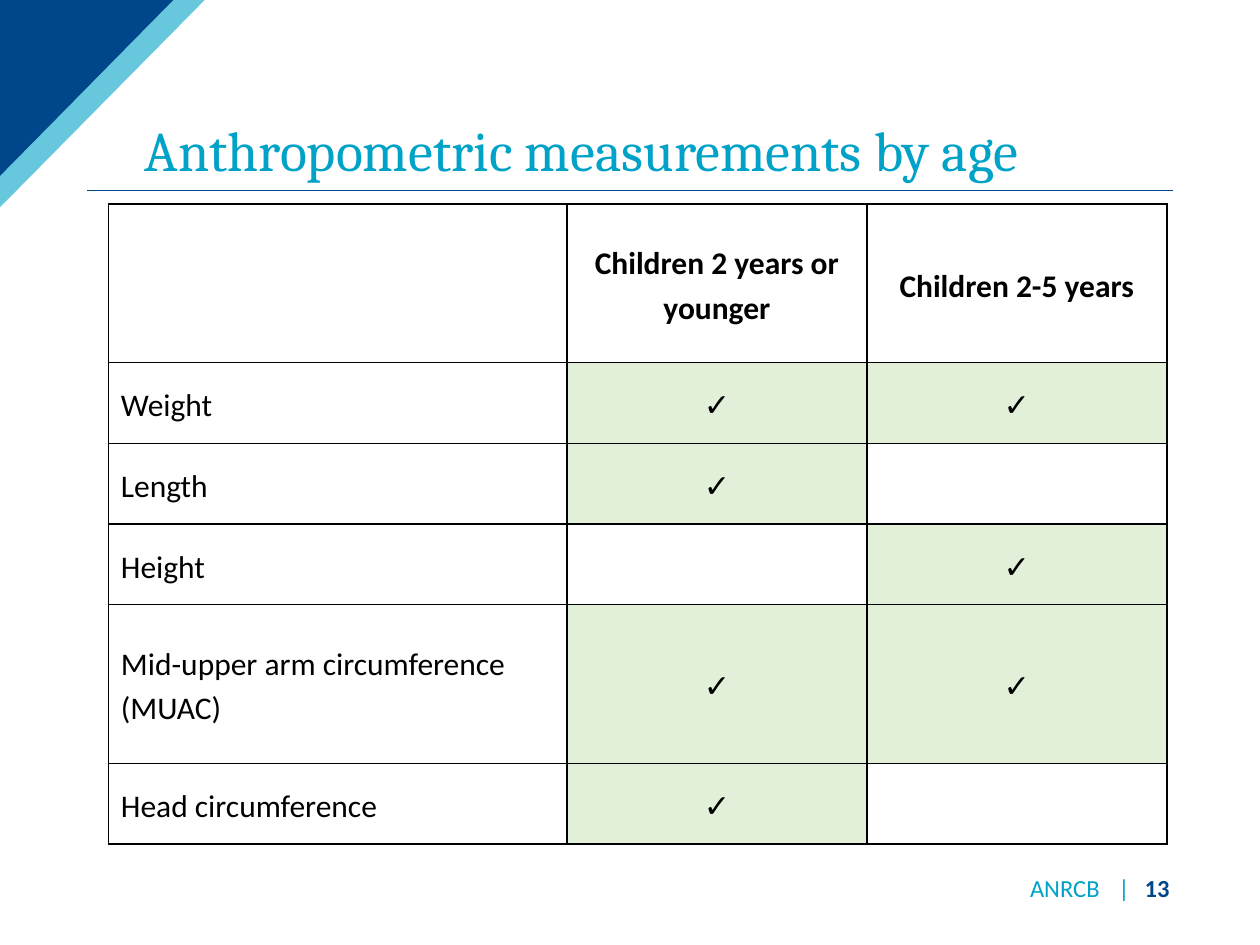
import pptx
import pptx.dml.color
import pptx.enum.shapes
import pptx.enum.text
import pptx.oxml
import pptx.oxml.ns
import pptx.util
from dataclasses import dataclass

Pt = pptx.util.Pt
ALIGN = pptx.enum.text.PP_ALIGN
ANCHOR = pptx.enum.text.MSO_ANCHOR
qn = pptx.oxml.ns.qn


@dataclass(frozen=True)
class Theme:
    navy: str = "00468B"
    cyan: str = "00A2C7"
    black: str = "000000"
    tick_fill: str = "E2F0D9"
    head_font: str = "Cambria"
    body_font: str = "Calibri"
    title: float = 32
    body: float = 18
    footer: float = 14
    border: float = 1


T = Theme()
HEADER = ("", "Children 2 years or younger", "Children 2-5 years")
# measurement, 2 years or younger, 2-5 years, row height
MEASURES = [
    ("Weight", True, True, 46.1),
    ("Length", True, False, 46.1),
    ("Height", False, True, 46.1),
    ("Mid-upper arm circumference (MUAC)", True, True, 90.7),
    ("Head circumference", True, False, 46.1),
]


def rgb(color):
    return pptx.dml.color.RGBColor.from_string(color)


def xml(tag, body="", attrs=""):
    ns = pptx.oxml.ns.nsdecls("a")
    return pptx.oxml.parse_xml(f"<a:{tag} {ns} {attrs}>{body}</a:{tag}>")


def add_run(p, text, size=T.body, color=T.black, font=T.body_font, bold=False):
    r = p.add_run()
    r.text = text
    r.font.size, r.font.name, r.font.bold = Pt(size), font, bold
    r.font.color.rgb = rgb(color)


def add_box(s, box, anchor, left_inset=7.2, right_inset=7.2):
    tf = s.shapes.add_textbox(*map(Pt, box)).text_frame
    tf.word_wrap = True
    tf.vertical_anchor = anchor
    tf.margin_left, tf.margin_right = Pt(left_inset), Pt(right_inset)
    return tf.paragraphs[0]


def add_corner(s, x, y, w, h, color, alpha=100):
    fb = s.shapes.build_freeform(Pt(x), Pt(y))
    fb.add_line_segments([(Pt(x + w), Pt(y)), (Pt(x), Pt(y + h))])
    sp = fb.convert_to_shape()
    sp.shadow.inherit = False
    sp.fill.solid()
    sp.fill.fore_color.rgb = rgb(color)
    sp.line.fill.background()
    if alpha < 100:
        clr = sp.fill._xPr.find(qn("a:solidFill"))[0]
        clr.append(xml("alpha", attrs=f'val="{alpha * 1000}"'))


def add_title(s, x, y, w, h):
    # Rule under the title
    rule = s.shapes.add_connector(pptx.enum.shapes.MSO_CONNECTOR.STRAIGHT,
                                  Pt(49.7), Pt(y + h), Pt(670.3), Pt(y + h))
    rule.line.color.rgb = rgb(T.navy)
    rule.line.width = Pt(0.75)
    rule._element.spPr.append(xml("effectLst"))
    # Title text
    p = add_box(s, (x, y, w, h), ANCHOR.BOTTOM)
    p.line_spacing = 0.9
    add_run(p, "Anthropometric measurements by age", T.title, T.cyan, T.head_font)


def add_footer(s, x, y, w, h):
    # The tab stops place the bar and the number; no right inset, so they fit
    p = add_box(s, (x, y, w, h), ANCHOR.MIDDLE, left_inset=32, right_inset=0)
    stops = "".join(f'<a:tab pos="{Pt(pos)}" algn="l"/>' for pos in (50.5, 65.5))
    p._p.get_or_add_pPr().append(xml("tabLst", stops))
    add_run(p, "ANRCB\t|\t", T.footer, T.cyan)
    add_run(p, "13", T.footer, T.navy, bold=True)


def fill_cell(cell, text, align, bold, color):
    tcPr = cell._tc.get_or_add_tcPr()
    line = f'<a:solidFill><a:srgbClr val="{T.black}"/></a:solidFill>'
    for side in ("lnL", "lnR", "lnT", "lnB"):
        tcPr.append(xml(side, line, f'w="{Pt(T.border)}"'))
    if color:
        cell.fill.solid()
        cell.fill.fore_color.rgb = rgb(color)
    else:
        cell.fill.background()
    cell.vertical_anchor = ANCHOR.MIDDLE
    if text:
        p = cell.text_frame.paragraphs[0]
        p.alignment = align
        p.line_spacing = 1.15
        add_run(p, text, bold=bold)


def add_measures(s, x, y, w, h):
    rows = [HEADER] + [(name, *("✓" if m else "" for m in marks))
                       for name, *marks, _ in MEASURES]
    heights = [90.7] + [m[-1] for m in MEASURES]
    name_w = 262.1
    widths = [name_w] + [(w - name_w) / 2] * 2
    tbl = s.shapes.add_table(len(rows), len(widths), Pt(x), Pt(y), Pt(w), Pt(h)).table
    tbl.first_row = tbl.horz_banding = False
    for col, width in zip(tbl.columns, widths):
        col.width = Pt(width)
    for i, (row, height) in enumerate(zip(rows, heights)):
        tbl.rows[i].height = Pt(height)
        for j, text in enumerate(row):
            fill_cell(tbl.cell(i, j), text,
                      align=ALIGN.CENTER if j else ALIGN.LEFT,
                      bold=i == 0,
                      color=T.tick_fill if text == "✓" else None)


def main():
    prs = pptx.Presentation()
    prs.slide_width, prs.slide_height = Pt(720), Pt(540)
    s = prs.slides.add_slide(prs.slide_layouts[6])
    # Corner decoration
    add_corner(s, 0, 0, 117, 118.5, T.cyan, alpha=60)
    add_corner(s, 0, 0, 99, 100.5, T.navy)
    # Title, footer and table
    add_title(s, 75.6, 25.2, 635.8, 83.5)
    add_footer(s, 556.6, 499.7, 118.8, 15.1)
    add_measures(s, 61.9, 116.6, 604.9, 365.8)
    prs.save("out.pptx")


if __name__ == "__main__":
    main()
